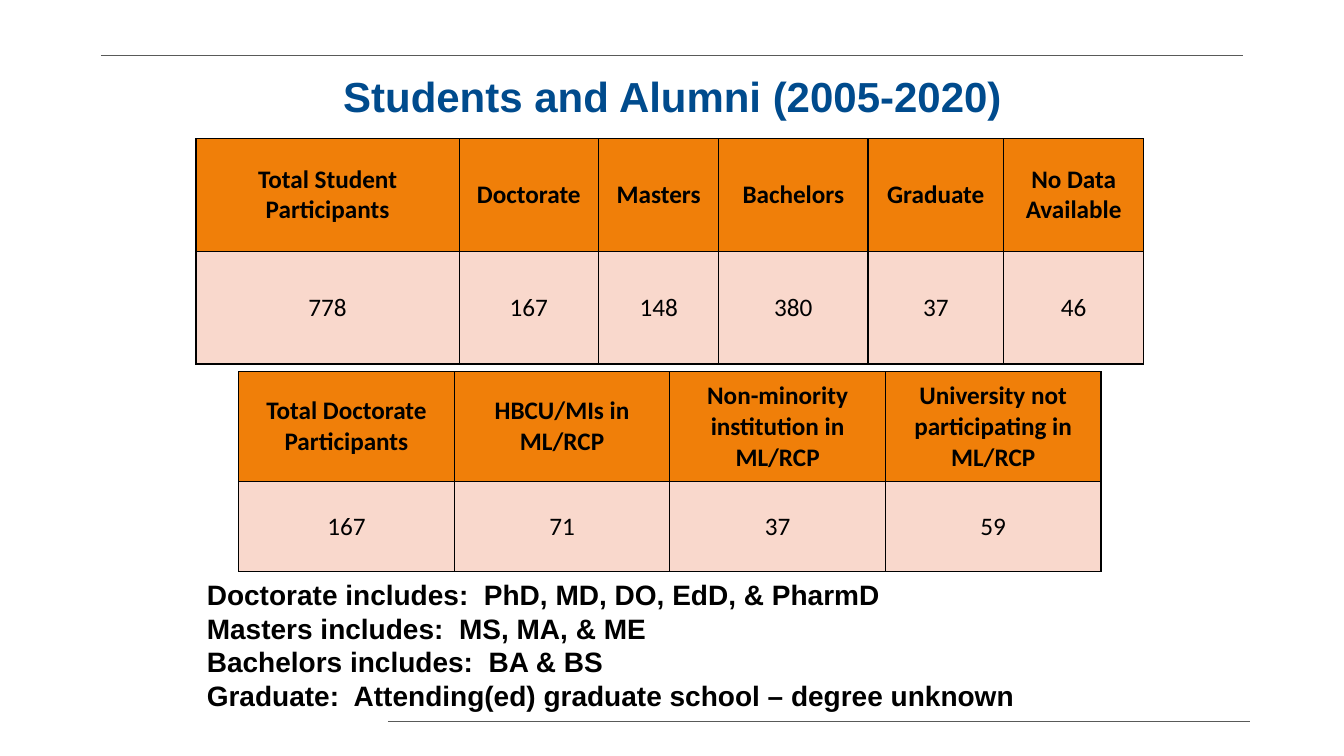
from lxml.etree import SubElement
from pptx import Presentation
from pptx.dml.color import RGBColor
from pptx.enum.shapes import MSO_CONNECTOR as Connector
from pptx.enum.text import MSO_ANCHOR as Anchor, MSO_AUTO_SIZE as AutoSize, PP_ALIGN as Align
from pptx.oxml.ns import qn
from pptx.util import Pt


def color(hex_code):
    return RGBColor.from_string(hex_code)


def add_run(paragraph, text, font, size, hex_code, bold):
    run = paragraph.add_run()
    run.text = text
    run.font.name = font
    run.font.size = Pt(size)
    run.font.bold = bold
    run.font.color.rgb = color(hex_code)


deck = Presentation()
deck.slide_width, deck.slide_height = Pt(960), Pt(540)
slide = deck.slides.add_slide(deck.slide_layouts[1])
heading, degree_notes = slide.placeholders

# Rules at the top and bottom
for left, right, y in [(72, 888, 39.5), (277, 893, 515)]:
    rule = slide.shapes.add_connector(Connector.STRAIGHT, Pt(left), Pt(y), Pt(right), Pt(y))
    rule.line.color.rgb = color("595A59")
    rule.line.width = Pt(0.5)
    SubElement(rule._element.spPr, qn("a:effectLst"))

# Heading
heading.left, heading.top, heading.width, heading.height = Pt(74), Pt(50.5), Pt(813), Pt(52)
heading.text_frame.vertical_anchor = Anchor.TOP
heading.text_frame.auto_size = AutoSize.NONE
heading_line = heading.text_frame.paragraphs[0]
heading_line.alignment = Align.CENTER
heading_line.line_spacing = 0.9
add_run(heading_line, "Students and Alumni (2005-2020)", "Arial", 30, "004B8D", True)

# Participant tables: left, top, column widths, row heights, (header, count) pairs
participants = (140, 99, [188, 99.5, 86, 106.5, 97, 100], [80.5, 80.5], [
    ("Total Student Participants", "778"), ("Doctorate", "167"), ("Masters", "148"),
    ("Bachelors", "380"), ("Graduate", "37"), ("No Data Available", "46")])
doctorates = (170.5, 265.5, [154] * 4, [78.5, 64.5], [
    ("Total Doctorate Participants", "167"), ("HBCU/MIs in ML/RCP", "71"),
    ("Non-minority institution in ML/RCP", "37"),
    ("University not participating in ML/RCP", "59")])

for left, top, widths, heights, counts in (participants, doctorates):
    table = slide.shapes.add_table(
        len(heights), len(widths), Pt(left), Pt(top), Pt(sum(widths)), Pt(sum(heights))).table
    for column, width in zip(table.columns, widths):
        column.width = Pt(width)
    for row, height in zip(table.rows, heights):
        row.height = Pt(height)
    for column_index, pair in enumerate(counts):
        for row_index, text in enumerate(pair):
            is_header = row_index == 0
            cell = table.cell(row_index, column_index)
            cell.vertical_anchor = Anchor.MIDDLE
            # Borders come before the fill in the cell properties
            for side in ("lnL", "lnR", "lnT", "lnB"):
                border = SubElement(cell._tc.get_or_add_tcPr(), qn(f"a:{side}"), w=str(Pt(1)))
                border_fill = SubElement(border, qn("a:solidFill"))
                SubElement(border_fill, qn("a:srgbClr"), val="000000")
            cell.fill.solid()
            cell.fill.fore_color.rgb = color("F07F09" if is_header else "F9D8CC")
            label = cell.text_frame.paragraphs[0]
            label.alignment = Align.CENTER
            add_run(label, text, "Calibri", 18, "000000", is_header)

# Degree notes
degree_notes.left, degree_notes.top = Pt(140.5), Pt(409)
degree_notes.width, degree_notes.height = Pt(648), Pt(104.5)
notes_frame = degree_notes.text_frame
notes_frame.vertical_anchor = Anchor.TOP
notes_frame.auto_size = AutoSize.NONE
for index, text in enumerate([
        "Doctorate includes:  PhD, MD, DO, EdD, & PharmD",
        "Masters includes:  MS, MA, & ME",
        "Bachelors includes:  BA & BS",
        "Graduate:  Attending(ed) graduate school – degree unknown"]):
    note = notes_frame.add_paragraph() if index else notes_frame.paragraphs[0]
    note_format = note._p.get_or_add_pPr()
    note_format.set("marL", "0")
    note_format.set("indent", "0")
    SubElement(note_format, qn("a:buNone"))
    note.space_before = Pt(0)
    add_run(note, text, "Arial", 20, "000000", True)

deck.save("out.pptx")
